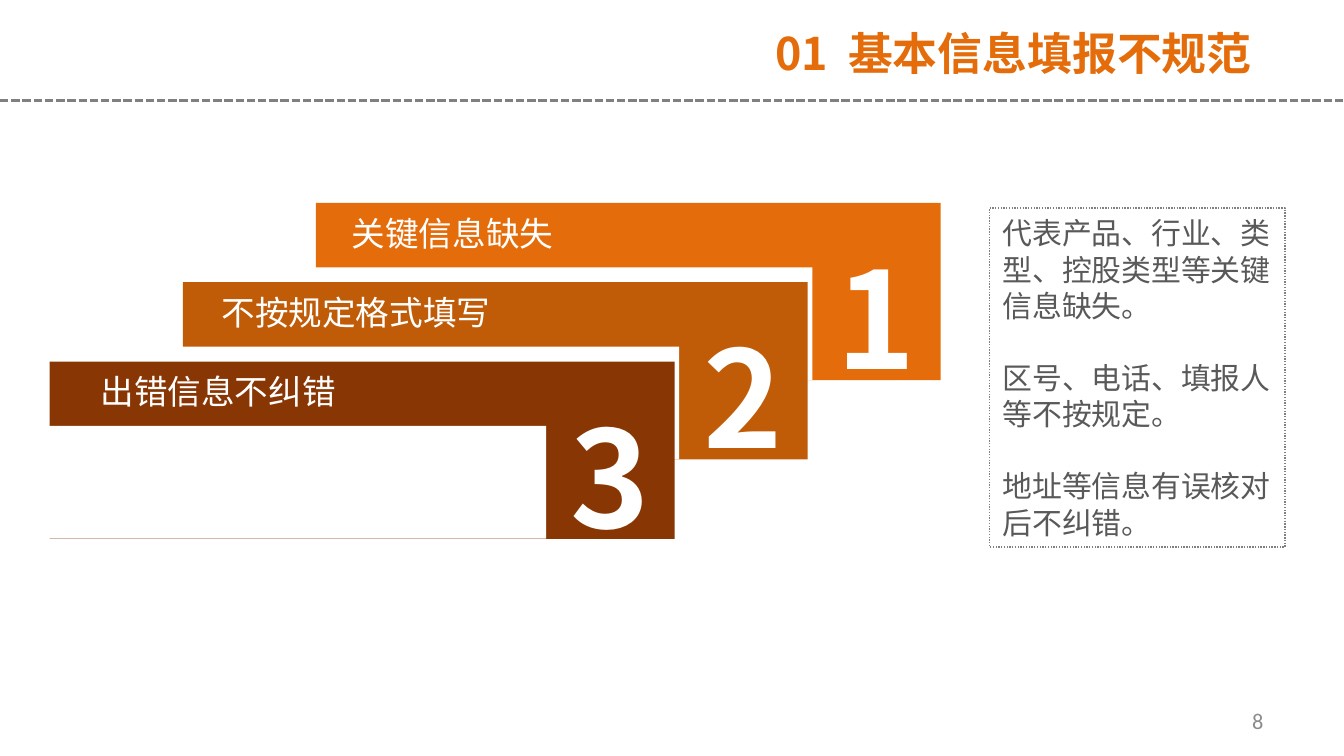
from pptx import Presentation
from pptx.dml.color import RGBColor
from pptx.enum.dml import MSO_LINE
from pptx.enum.shapes import MSO_CONNECTOR, MSO_SHAPE
from pptx.enum.text import MSO_ANCHOR, PP_ALIGN
from pptx.oxml.ns import qn
from pptx.util import Pt
from lxml import etree

COLORS = {
    "orange": "E46C0A", "rust": "C05B08", "brown": "893605",
    "white": "FFFFFF", "rule": "808080", "body": "595959", "page": "8C8C8C",
}
CJK, NUMERAL, LATIN = "Noto Sans CJK SC", "Noto Sans CJK JP", "Calibri"
LINE_HEIGHT = 1.21  # line pitch relative to the text size


def rgb(name):
    return RGBColor.from_string(COLORS[name])


def write(shape, lines, size, color, font=CJK, bold=False,
          align=PP_ALIGN.LEFT, gap=0):
    frame = shape.text_frame
    frame.word_wrap = True
    frame.text = "\n".join(lines)
    for paragraph in frame.paragraphs:
        paragraph.alignment = align
        paragraph.line_spacing = Pt(round(size * LINE_HEIGHT, 1))
        for run in paragraph.runs:
            run.font.size, run.font.bold = Pt(size), bold
            run.font.name = font
            run.font.color.rgb = rgb(color)
            east_asian = etree.SubElement(run.font._element, qn("a:ea"))
            east_asian.set("typeface", font)
    for paragraph in frame.paragraphs[:-1]:
        paragraph.space_after = Pt(gap)


def add_text(slide, x, y, w, h, text, size, color, **style):
    box = slide.shapes.add_textbox(Pt(x), Pt(y), Pt(w), Pt(h))
    write(box, [text], size, color, **style)
    return box


def add_block(slide, x, y, w, h, fill=None):
    block = slide.shapes.add_shape(MSO_SHAPE.RECTANGLE, Pt(x), Pt(y), Pt(w), Pt(h))
    block.shadow.inherit = False
    block.line.fill.background()
    if fill:
        block.fill.solid()
        block.fill.fore_color.rgb = rgb(fill)
    else:
        block.fill.background()
    return block


def add_header(slide, x, y, w, h):
    # Dashed rule below the title
    rule = slide.shapes.add_connector(
        MSO_CONNECTOR.STRAIGHT, Pt(x), Pt(y + h), Pt(x + w), Pt(y + h))
    rule.line.color.rgb = rgb("rule")
    rule.line.width = Pt(1.5)
    rule.line.dash_style = MSO_LINE.SQUARE_DOT
    etree.SubElement(rule._element.spPr, qn("a:effectLst"))
    add_text(slide, x + 348.5, y + 10, 329, 36, "01  基本信息填报不规范", 24,
             "orange", bold=True, align=PP_ALIGN.RIGHT)


def add_staircase(slide, x, y, w, h):
    steps = [("关键信息缺失", "orange", 12.2), ("不按规定格式填写", "rust", 13.7),
             ("出错信息不纠错", "brown", 20.2)]
    step_w, step_h = 334.8, 95
    shift_x = (w - step_w) / (len(steps) - 1)
    shift_y = (h - step_h) / (len(steps) - 1)
    for index, (label, color, indent) in enumerate(steps):
        left = x + w - step_w - index * shift_x
        top = y + index * shift_y
        # Bar with its lower left cut away
        add_block(slide, left, top, step_w, step_h, color)
        add_block(slide, left - 1, top + 34.5, 267, 60.5, "white")
        # Label and number
        add_text(slide, left + indent, top + 1.5, 310, 28.8, label, 18, "white")
        add_text(slide, left + 272, top + 13, 58, 94.3, str(index + 1), 72,
                 "white", font=NUMERAL, bold=True)


def add_details(slide, x, y, w, h):
    panel = add_block(slide, x, y, w, h)
    panel.line.color.rgb = rgb("rule")
    panel.line.width = Pt(0.75)
    panel.line.dash_style = MSO_LINE.ROUND_DOT
    panel.text_frame.vertical_anchor = MSO_ANCHOR.TOP
    write(panel, ["代表产品、行业、类型、控股类型等关键信息缺失。",
                  "区号、电话、填报人等不按规定。",
                  "地址等信息有误核对后不纠错。"], 16, "body", gap=19.3)


def add_page_number(slide, x, y, w, h):
    number = add_text(slide, x, y, w, h, "8", 12, "page", font=LATIN,
                      align=PP_ALIGN.RIGHT)
    number.text_frame.vertical_anchor = MSO_ANCHOR.MIDDLE


def main():
    deck = Presentation()
    deck.slide_width, deck.slide_height = Pt(720), Pt(405)
    slide = deck.slides.add_slide(deck.slide_layouts[6])
    add_header(slide, 0, 0, 720, 54)
    add_page_number(slide, 516, 375, 168, 21.6)
    add_staircase(slide, 26.6, 108.7, 477.4, 180)
    add_details(slide, 530, 111.5, 158.5, 181.5)
    deck.save("out.pptx")


if __name__ == "__main__":
    main()
